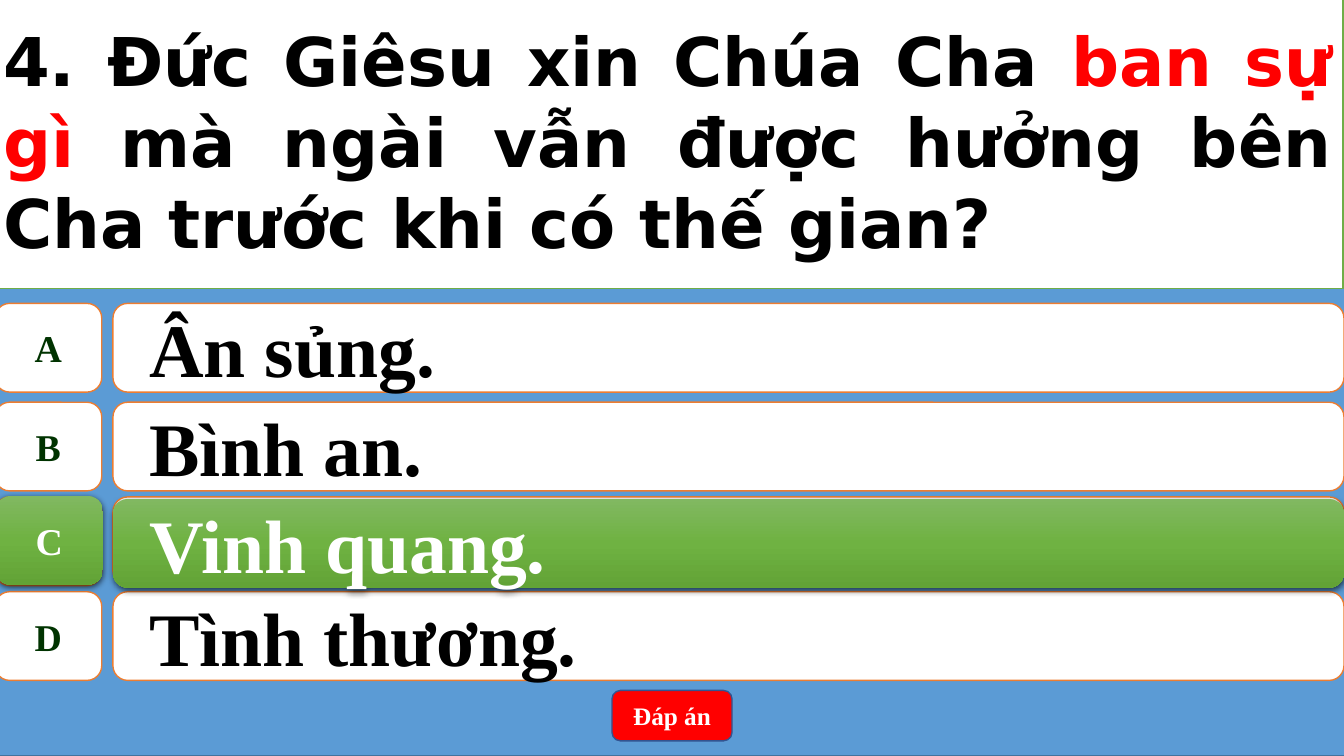
"""Build a quiz slide with four answers, the right one marked in green."""
from dataclasses import dataclass

from lxml.etree import SubElement
from pptx import Presentation
from pptx.dml.color import RGBColor
from pptx.enum.shapes import MSO_SHAPE as Kind
from pptx.enum.text import MSO_ANCHOR as Anchor, MSO_AUTO_SIZE as Fit, PP_ALIGN as Align
from pptx.oxml.ns import qn
from pptx.shapes.autoshape import Shape
from pptx.slide import Slide
from pptx.util import Inches, Pt

WHITE = RGBColor(0xFF, 0xFF, 0xFF)
BLACK = RGBColor(0x00, 0x00, 0x00)
RED = RGBColor(0xFF, 0x00, 0x00)
BLUE = RGBColor(0x5B, 0x9B, 0xD5)
STEEL = RGBColor(0x43, 0x73, 0x9E)
NAVY = RGBColor(0x32, 0x54, 0x91)
AMBER = RGBColor(0xED, 0x7D, 0x31)
DARK = RGBColor(0x00, 0x33, 0x00)
GREEN = RGBColor(0x70, 0xAD, 0x47)
SHADE = ((0, RGBColor(0x81, 0xB8, 0x61)), (50, RGBColor(0x6F, 0xB2, 0x42)),
         (100, RGBColor(0x62, 0xA3, 0x36)))
SERIF = "Times New Roman"
SANS = "DejaVu Sans"


@dataclass
class Box:
    left: float
    top: float
    width: float
    height: float


@dataclass
class Answer:
    key: str
    text: str
    top: float


ANSWERS = [
    Answer("A", "Ân sủng.", 3.01),
    Answer("B", "Bình an.", 3.99),
    Answer("C", "Vinh quang.", 4.93),
    Answer("D", "Tình thương.", 5.87),
]
RIGHT = ANSWERS[2]
QUERY = [
    ("4. Đức Giêsu xin Chúa Cha ", BLACK),
    ("ban sự gì ", RED),
    ("mà ngài vẫn được hưởng bên Cha trước khi có thế gian?", BLACK),
]


def paint(shape: Shape, fill: RGBColor, line: RGBColor) -> None:
    shape.fill.solid()
    shape.fill.fore_color.rgb = fill
    shape.line.color.rgb = line
    shape.line.width = Pt(1)


def draw(shapes, kind: Kind, box: Box) -> Shape:
    shape = shapes.add_shape(kind, Inches(box.left), Inches(box.top),
                             Inches(box.width), Inches(box.height))
    shape.shadow.inherit = False
    return shape


def label(shape: Shape, text: str, size: int, color: RGBColor, align: Align) -> None:
    frame = shape.text_frame
    frame.text = text
    frame.vertical_anchor = Anchor.MIDDLE
    para = frame.paragraphs[0]
    para.alignment = align
    font = para.runs[0].font
    font.name, font.size, font.bold = SERIF, Pt(size), True
    font.color.rgb = color


def glow(shape: Shape) -> None:
    shape.line.fill.background()
    shape.fill.gradient()
    shape.fill.gradient_angle = 270
    stops = next(shape.element.iter(qn("a:gsLst")))
    stops.clear()
    for pos, color in SHADE:
        stop = SubElement(stops, qn("a:gs"), pos=str(pos * 1000))
        SubElement(stop, qn("a:srgbClr"), val=str(color))
    effect = next(shape.element.iter(qn("a:effectLst")))
    cast = SubElement(effect, qn("a:outerShdw"), blurRad=str(Pt(4.5)), dist=str(Pt(1.5)),
                      dir="5400000", algn="ctr", rotWithShape="0")
    tint = SubElement(cast, qn("a:srgbClr"), val=str(BLACK))
    SubElement(tint, qn("a:alpha"), val="63000")


def add_row(slide: Slide, item: Answer, key_box: Box, bar_box: Box, lit: bool = False) -> None:
    group = slide.shapes.add_group_shape()
    key = draw(group.shapes, Kind.FLOWCHART_ALTERNATE_PROCESS, key_box)
    bar = draw(group.shapes, Kind.ROUNDED_RECTANGLE, bar_box)
    for shape in (key, bar):
        if lit:
            glow(shape)
        else:
            paint(shape, WHITE, AMBER)
    label(key, item.key, 27, WHITE if lit else DARK, Align.CENTER)
    key.text_frame.word_wrap = False
    label(bar, item.text, 54, WHITE if lit else BLACK, Align.LEFT)
    bar.text_frame.word_wrap = True
    para = bar.text_frame.paragraphs[0]
    para.level = 1
    props = para._p.get_or_add_pPr()
    props.set("marL", str(Inches(0.5)))
    props.set("indent", str(Inches(-0.28)))


def add_query(slide: Slide) -> None:
    title = slide.shapes.title
    title.left, title.top = Inches(-0.07), Inches(-0.07)
    title.width, title.height = Inches(13.39), Inches(2.93)
    paint(title, WHITE, GREEN)
    frame = title.text_frame
    frame.word_wrap = True
    frame.auto_size = Fit.NONE
    frame.vertical_anchor = Anchor.MIDDLE
    para = frame.paragraphs[0]
    para.alignment = Align.JUSTIFY
    for text, color in QUERY:
        run = para.add_run()
        run.text = text
        run.font.name, run.font.size, run.font.bold = SANS, Pt(48), True
        run.font.color.rgb = color
    title.element.getparent().append(title.element)


def main() -> None:
    deck = Presentation()
    deck.slide_width, deck.slide_height = Inches(13.33), Inches(7.5)
    slide = deck.slides.add_slide(deck.slide_layouts[5])
    paint(draw(slide.shapes, Kind.RECTANGLE, Box(-0.05, 0, 13.39, 7.5)), BLUE, STEEL)
    for item in ANSWERS:
        add_row(slide, item, Box(-0.05, item.top, 1.06, 0.88), Box(1.12, item.top, 12.21, 0.88))
    add_row(slide, RIGHT, Box(-0.04, 4.92, 1.06, 0.88), Box(1.12, 4.95, 12.21, 0.88), True)
    button = draw(slide.shapes, Kind.ROUNDED_RECTANGLE, Box(6.07, 6.85, 1.19, 0.5))
    paint(button, RED, NAVY)
    label(button, "Đáp án", 18, WHITE, Align.CENTER)
    add_query(slide)
    deck.save("out.pptx")


if __name__ == "__main__":
    main()
